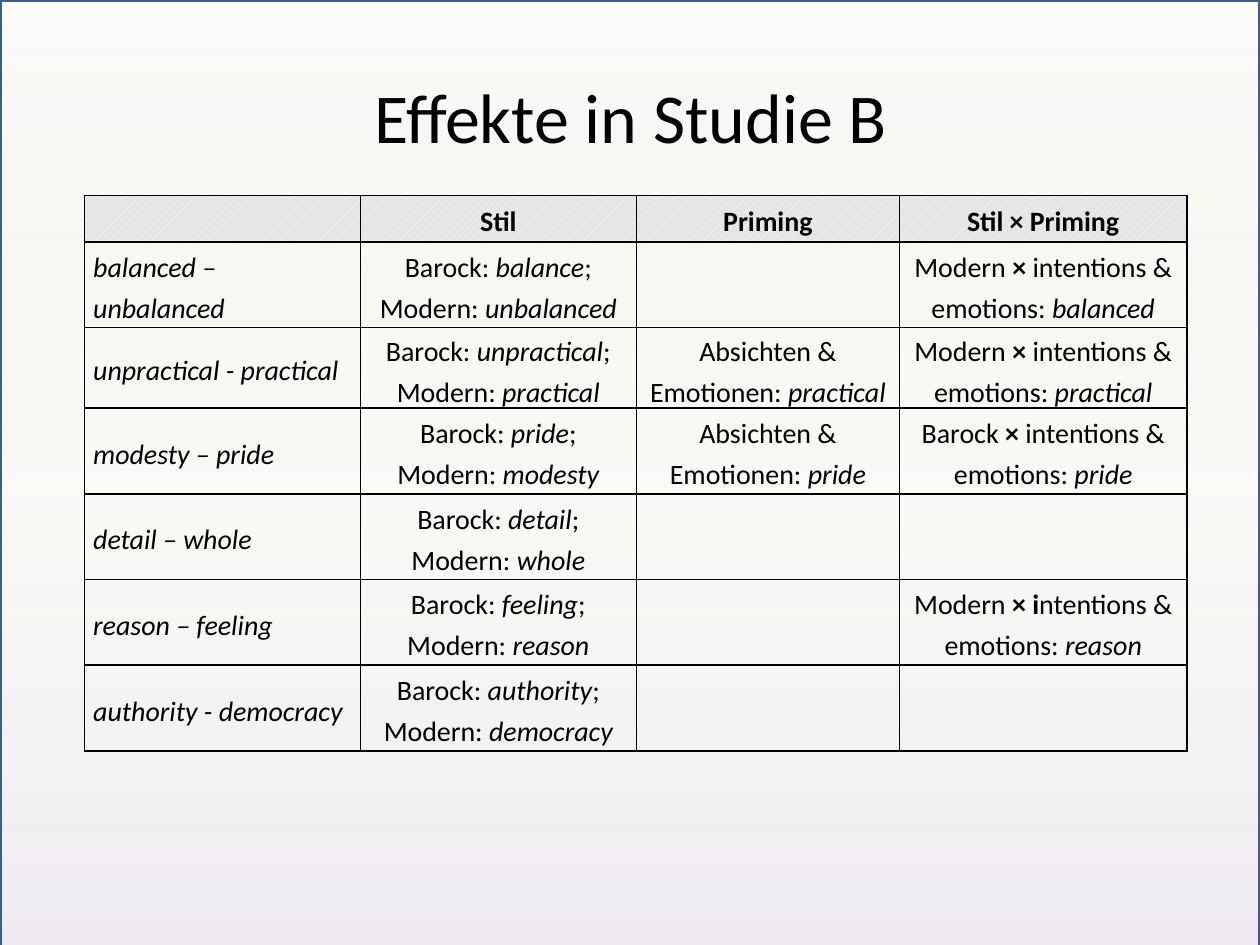
"""Build the slide "Effekte in Studie B" with its table of effects."""
from lxml import etree
from pptx import Presentation
from pptx.dml.color import RGBColor
from pptx.enum.dml import MSO_PATTERN
from pptx.enum.shapes import MSO_SHAPE
from pptx.enum.text import MSO_ANCHOR, PP_ALIGN
from pptx.oxml import parse_xml
from pptx.oxml.ns import qn
from pptx.util import Inches, Pt

RECT = MSO_SHAPE.RECTANGLE
MIDDLE = MSO_ANCHOR.MIDDLE
LEFT, CENTER = PP_ALIGN.LEFT, PP_ALIGN.CENTER
PCT_10 = MSO_PATTERN.PERCENT_10
NS = "http://schemas.openxmlformats.org/drawingml/2006/main"

THEME = {
    "font": "Calibri",
    "title": Pt(40),
    "body": Pt(16),
    "text": RGBColor.from_string("000000"),
    "frame": RGBColor.from_string("3A5F8C"),
    "hatch": RGBColor.from_string("FFFFFF"),
    "header": RGBColor.from_string("E5E5E5"),
    "gradient": [(0, "F2F2F2", 30), (50, "C4BD97", 7), (100, "B3A2C7", 22)],
}
PARAGRAPH = {"line_spacing": 1.2, "space_before": Pt(4), "space_after": Pt(4)}
CELL = {
    "vertical_anchor": MIDDLE,
    "margin_left": Inches(0.07),
    "margin_right": Inches(0.07),
    "margin_top": 0,
    "margin_bottom": 0,
}
COLS = [2.19, 2.19, 2.09, 2.28]
ROWS = [0.37, 0.68, 0.45, 0.68, 0.68, 0.68, 0.68]
EFFECTS = [
    ["", "*Stil*", "*Priming*", "*Stil × Priming*"],
    ["_balanced – unbalanced_", "Barock: _balance_; Modern: _unbalanced_", "",
     "Modern *× *intentions & emotions: _balanced_"],
    ["_unpractical - practical_", "Barock: _unpractical_; Modern: _practical_",
     "Absichten & Emotionen: _practical_",
     "Modern *× *intentions & emotions: _practical_"],
    ["_modesty – pride_", "Barock: _pride_; Modern: _modesty_",
     "Absichten & Emotionen: _pride_",
     "Barock *× *intentions & emotions: _pride_"],
    ["_detail – whole_", "Barock: _detail_; Modern: _whole_", "", ""],
    ["_reason – feeling_", "Barock: _feeling_; Modern: _reason_", "",
     "Modern *× i*ntentions & emotions: _reason_"],
    ["_authority - democracy_", "Barock: _authority_; Modern: _democracy_", "", ""],
]


def set_format(target, values):
    """Set each named attribute on the target."""
    for name, value in values.items():
        setattr(target, name, value)


def add_runs(p, text, size):
    """Add runs, with _italic_ and *bold* marks."""
    for i, part in enumerate(text.split("_")):
        for j, piece in enumerate(part.split("*")):
            if piece:
                r = p.add_run()
                r.text = piece
                set_format(r.font, {"name": THEME["font"], "size": size,
                                    "italic": i % 2 == 1, "bold": j % 2 == 1})
                r.font.color.rgb = THEME["text"]


prs = Presentation()
set_format(prs, {"slide_width": Inches(10), "slide_height": Inches(7.5)})
s = prs.slides.add_slide(prs.slide_layouts[6])

backdrop = s.shapes.add_shape(RECT, 0, 0, Inches(10), Inches(7.69))
backdrop.shadow.inherit = False
backdrop.line.color.rgb = THEME["frame"]
backdrop.line.width = Pt(2)
stops = "".join(
    f'<a:gs pos="{pos * 1000}"><a:srgbClr val="{color}">'
    f'<a:alpha val="{alpha * 1000}"/></a:srgbClr></a:gs>'
    for pos, color, alpha in THEME["gradient"])
backdrop.fill.background()
spPr = backdrop.element.spPr
spPr.replace(spPr.find(qn("a:noFill")), parse_xml(
    f'<a:gradFill xmlns:a="{NS}" rotWithShape="1"><a:gsLst>{stops}</a:gsLst>'
    '<a:lin ang="5400000" scaled="0"/></a:gradFill>'))

title = s.shapes.add_textbox(Inches(1.14), Inches(0.29), Inches(7.73), Inches(1.25))
tf = title.text_frame
set_format(tf, {"word_wrap": True, "vertical_anchor": MIDDLE})
tf.paragraphs[0].alignment = CENTER
add_runs(tf.paragraphs[0], "Effekte in Studie B", THEME["title"])

table = s.shapes.add_table(len(ROWS), len(COLS), Inches(0.67), Inches(1.55),
                           Inches(sum(COLS)), Inches(sum(ROWS))).table
set_format(table, {"first_row": False, "horz_banding": False})
for column, width in zip(table.columns, COLS):
    column.width = Inches(width)
for row, height in zip(table.rows, ROWS):
    row.height = Inches(height)

for y, texts in enumerate(EFFECTS):
    for x, text in enumerate(texts):
        cell = table.cell(y, x)
        set_format(cell, CELL)
        tcPr = cell._tc.get_or_add_tcPr()
        for side in ("lnL", "lnR", "lnT", "lnB"):
            ln = etree.SubElement(tcPr, qn(f"a:{side}"), w=str(Pt(1)))
            fill = etree.SubElement(ln, qn("a:solidFill"))
            etree.SubElement(fill, qn("a:srgbClr"), val=str(THEME["text"]))
        if y == 0:
            cell.fill.patterned()
            cell.fill.pattern = PCT_10
            cell.fill.fore_color.rgb = THEME["hatch"]
            cell.fill.back_color.rgb = THEME["header"]
        else:
            cell.fill.background()
        if text:
            p = cell.text_frame.paragraphs[0]
            set_format(p, PARAGRAPH)
            p.alignment = LEFT if x == 0 else CENTER
            add_runs(p, text, THEME["body"])

prs.save("out.pptx")
